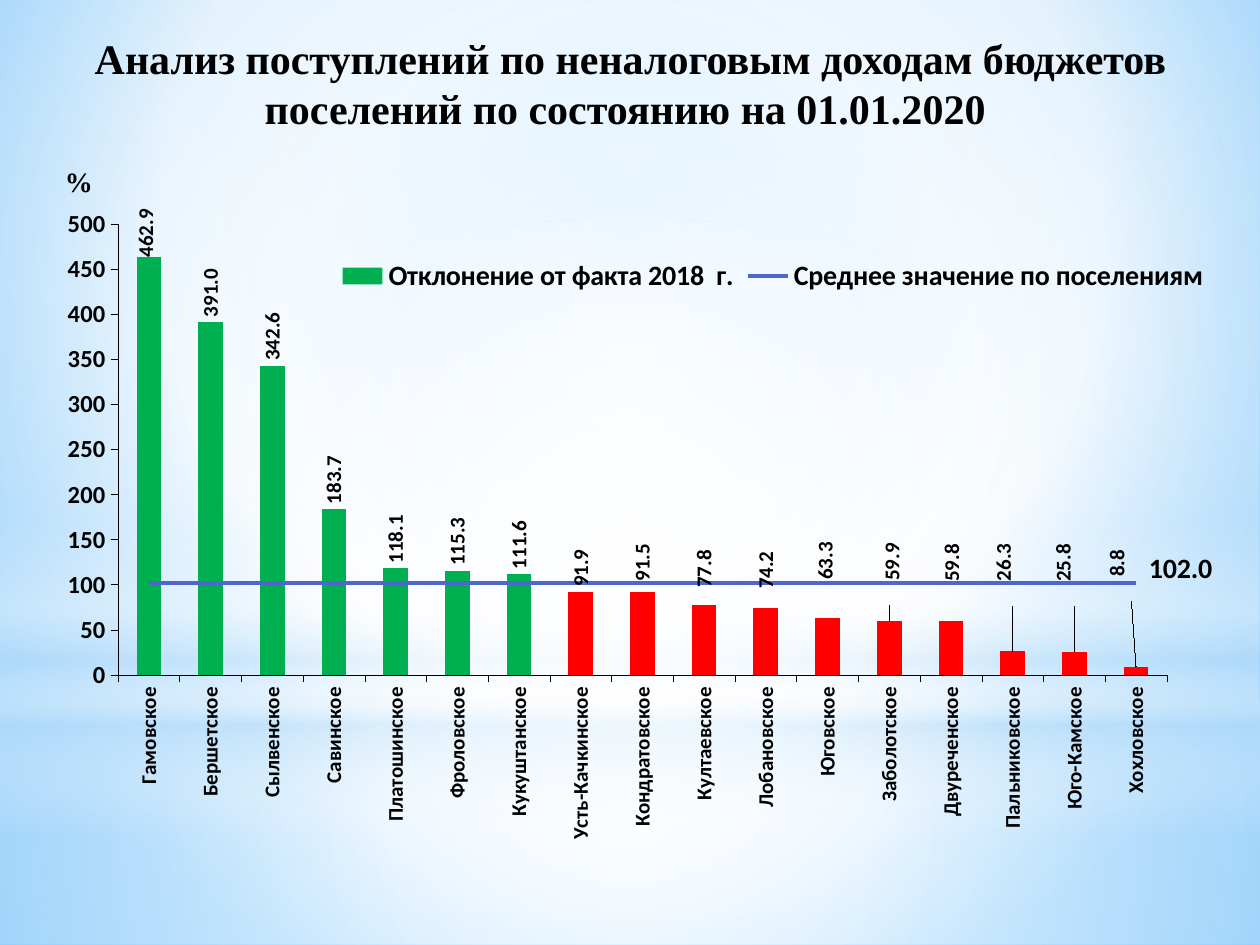
import pptx
import pptx.chart.data
import pptx.dml.color
import pptx.enum.chart
import pptx.enum.shapes
import pptx.enum.text
import pptx.oxml
import pptx.oxml.ns
import pptx.util

RGB = pptx.dml.color.RGBColor
BLACK = RGB(0x00, 0x00, 0x00)
GREEN = RGB(0x00, 0xB0, 0x50)
RED = RGB(0xFF, 0x00, 0x00)
BLUE = RGB(0x4E, 0x67, 0xC8)
WHITE = RGB(0xFF, 0xFF, 0xFF)
PALE_BLUE = RGB(0xB4, 0xDC, 0xFA)
SKY = RGB(0x9E, 0xD5, 0xFF)
DEEP_SKY = RGB(0x5B, 0xB9, 0xFF)

TITLE = "Анализ поступлений по неналоговым доходам бюджетов поселений по состоянию на 01.01.2020 "
UNIT = "%"
INCOME_NAME = "Отклонение от факта 2018  г. "
AVERAGE_NAME = "Среднее значение по поселениям"
AVERAGE = 102
SETTLEMENTS = [
    ("Гамовское", 462.9), ("Бершетское", 391), ("Сылвенское", 342.6),
    ("Савинское", 183.7), ("Платошинское", 118.1), ("Фроловское", 115.3),
    ("Кукуштанское", 111.6), ("Усть-Качкинское", 91.9), ("Кондратовское", 91.5),
    ("Култаевское", 77.8), ("Лобановское", 74.2), ("Юговское", 63.3),
    ("Заболотское", 59.9), ("Двуреченское", 59.8), ("Пальниковское", 26.3),
    ("Юго-Камское", 25.8), ("Хохловское", 8.8),
]
# Label shifts from the usual place above the bar: index -> (right, down) in px
LABEL_SHIFTS = {
    0: (-3, 5), 8: (0, -6), 9: (0, -12), 10: (0, -14), 11: (-2, -33),
    12: (3, -35), 13: (1, -34), 14: (-9, -65), 15: (-11, -65), 16: (-19, -85),
}
AVERAGE_SHIFT = (8, -14)

# Gradient stops: position %, colour, opacity %
CENTRE = (50, 50, 50, 50)
BACKGROUND = [(0, SKY, 100), (60, WHITE, 100), (100, DEEP_SKY, 100)]
RECTANGLE = pptx.enum.shapes.MSO_SHAPE.RECTANGLE
OVAL = pptx.enum.shapes.MSO_SHAPE.OVAL
BACKDROP = [  # preset, box in px, stops, focus (None: top to bottom)
    (RECTANGLE, (0, 703, 1260, 242),
     [(0, WHITE, 91), (37, WHITE, 76), (100, PALE_BLUE, 79)], CENTRE),
    (RECTANGLE, (0, 0, 1260, 703),
     [(0, WHITE, 89), (48, WHITE, 62), (100, PALE_BLUE, 79)], CENTRE),
    (RECTANGLE, (0, 519, 1260, 315),
     [(0, WHITE, 0), (29, WHITE, 30), (45, PALE_BLUE, 40), (55, WHITE, 26),
      (65, PALE_BLUE, 60), (100, WHITE, 0)], None),
    (OVAL, (0, 220, 1260, 703), [(0, WHITE, 100), (56, WHITE, 0)], CENTRE),
]

PAGE_SIZE = (1260, 945)
TITLE_BOX = (35, 26, 1191, 68)
CHART_BOX = (35, 165, 1206, 735)
PLOT_BOX = (83, 59, 1049, 451)  # within the chart
LEGEND_BOX = (300, 92, 876, 38)
UNIT_BOX = (15, 158, 118, 47)
UNIT_INDENT = 50
LABEL_FORMAT = "#,##0.0"


def px(count):
    return pptx.util.Emu(count * 914400 // 126)


def element(tag, content="", attributes=""):
    """Make an XML element of the drawing (a) or chart (c) namespace."""
    return pptx.oxml.parse_xml(
        f'<{tag} {pptx.oxml.ns.nsdecls("a", "c")} {attributes}>{content}</{tag}>')


def paint_gradient(owner, stops, focus):
    """Replace the first solid fill inside owner by a gradient."""
    stop_xml = "".join(
        f'<a:gs pos="{place * 1000}"><a:srgbClr val="{colour}">'
        f'<a:alpha val="{opacity * 1000}"/></a:srgbClr></a:gs>'
        for place, colour, opacity in stops)
    if focus:
        sides = " ".join(f'{side}="{share * 1000}"' for side, share in zip("ltrb", focus))
        course = f'<a:path path="circle"><a:fillToRect {sides}/></a:path>'
    else:
        course = '<a:lin ang="5400000" scaled="0"/>'
    solid = owner.xpath(".//a:solidFill")[0]
    gradient = element("a:gradFill", f"<a:gsLst>{stop_xml}</a:gsLst>{course}", 'rotWithShape="1"')
    solid.getparent().replace(solid, gradient)


def set_font(font, size, name="Calibri"):
    font.size, font.name, font.bold = pptx.util.Pt(size), name, True
    font.color.rgb = BLACK


def turn_upright(owner):
    body = owner.xpath("./c:txPr/a:bodyPr")[0]
    body.set("rot", "-5400000")
    body.set("vert", "horz")


def layout(box, fixed=True):
    """Manual layout from px: a fixed box, or a shift when not fixed."""
    shares = [value / CHART_BOX[2 + index % 2] for index, value in enumerate(box)]
    modes = '<c:xMode val="edge"/><c:yMode val="edge"/>' if fixed else ""
    values = "".join(f'<c:{key} val="{share:.4f}"/>' for key, share in zip("xywh", shares))
    return element("c:layout", f"<c:manualLayout>{modes}{values}</c:manualLayout>")


def shift_label(point, shift, position, size, upright):
    label = point.data_label
    set_font(label.font, size)
    label.position = position
    node = point.data_label._get_or_add_dLbl()
    if upright:
        turn_upright(node)
    index = node.find(pptx.oxml.ns.qn("c:idx"))
    index.addnext(element("c:numFmt", attributes=f'formatCode="{LABEL_FORMAT}" sourceLinked="0"'))
    index.addnext(layout(shift, fixed=False))


def style_axis(axis, size):
    set_font(axis.tick_labels.font, size)
    axis.has_major_gridlines = False
    axis.major_tick_mark = pptx.enum.chart.XL_TICK_MARK.OUTSIDE
    axis.minor_tick_mark = pptx.enum.chart.XL_TICK_MARK.NONE
    axis.format.line.color.rgb = BLACK
    axis.format.line.width = pptx.util.Pt(0.25)


def split_off_line(chart):
    """Move the second series from the column plot to a line plot."""
    columns = chart.plots[0]._element
    series = columns.xpath("./c:ser")[1]
    for flag in series.xpath("./c:invertIfNegative"):
        series.remove(flag)
    line = element("c:lineChart", '<c:grouping val="standard"/><c:varyColors val="0"/>')
    line.append(series)
    line.append(element("c:marker", attributes='val="1"'))
    for axis in columns.xpath("./c:axId"):
        line.append(element("c:axId", attributes=f'val="{axis.get("val")}"'))
    columns.addnext(line)


def add_income_chart(page):
    data = pptx.chart.data.CategoryChartData()
    data.categories = [name for name, _ in SETTLEMENTS]
    data.add_series(INCOME_NAME, [value for _, value in SETTLEMENTS])
    data.add_series(AVERAGE_NAME, [AVERAGE] * len(SETTLEMENTS))
    chart = page.shapes.add_chart(pptx.enum.chart.XL_CHART_TYPE.COLUMN_CLUSTERED,
                                  *map(px, CHART_BOX), data).chart
    set_font(chart.font, 18)
    chart.has_title = False
    split_off_line(chart)
    positions = pptx.enum.chart.XL_LABEL_POSITION

    columns, line = chart.plots
    columns.gap_width = 150
    columns.vary_by_categories = False
    income = columns.series[0]
    income.format.fill.solid()
    income.format.fill.fore_color.rgb = GREEN
    labels = income.data_labels
    labels.show_value = True
    labels.number_format, labels.number_format_is_linked = LABEL_FORMAT, False
    labels.position = positions.OUTSIDE_END
    set_font(labels.font, 12)
    turn_upright(labels._element)
    for index, (_, value) in enumerate(SETTLEMENTS):
        if value < AVERAGE:
            fill = income.points[index].format.fill
            fill.solid()
            fill.fore_color.rgb = RED
    for index, shift in LABEL_SHIFTS.items():
        shift_label(income.points[index], shift, positions.OUTSIDE_END, 12, True)

    average = line.series[0]
    average.smooth = False
    average.format.line.color.rgb = BLUE
    average.format.line.width = pptx.util.Pt(2.25)
    average.marker.style = pptx.enum.chart.XL_MARKER_STYLE.NONE
    average.data_labels.show_value = False
    shift_label(average.points[len(SETTLEMENTS) - 1], AVERAGE_SHIFT, positions.RIGHT, 16, False)

    style_axis(chart.category_axis, 12)
    chart.category_axis.tick_label_position = pptx.enum.chart.XL_TICK_LABEL_POSITION.LOW
    turn_upright(chart.category_axis._element)
    scale = chart.value_axis
    style_axis(scale, 14)
    scale.minimum_scale, scale.maximum_scale, scale.major_unit = 0, 500, 50
    scale.tick_labels.number_format, scale.tick_labels.number_format_is_linked = "0", False

    chart.has_legend = True
    legend = chart.legend
    legend.position = pptx.enum.chart.XL_LEGEND_POSITION.BOTTOM
    legend.include_in_layout = False
    set_font(legend.font, 16)
    for old in chart._chartSpace.xpath(".//c:plotArea/c:layout | .//c:legend/c:layout"):
        old.getparent().remove(old)
    plot_layout = layout(PLOT_BOX)
    plot_layout[0].insert(0, element("c:layoutTarget", attributes='val="inner"'))
    chart._chartSpace.xpath(".//c:plotArea")[0].insert(0, plot_layout)
    legend._element.xpath("./c:legendPos")[0].addnext(layout(LEGEND_BOX))


def write(frame, text, size, align):
    frame.word_wrap = True
    frame.vertical_anchor = pptx.enum.text.MSO_ANCHOR.TOP
    frame.text = text
    para = frame.paragraphs[0]
    para.alignment = align
    set_font(para.font, size, "Times New Roman")


def main():
    deck = pptx.Presentation()
    deck.slide_width, deck.slide_height = map(px, PAGE_SIZE)
    page = deck.slides.add_slide(deck.slide_layouts[5])
    page.background.fill.solid()
    paint_gradient(page.element, BACKGROUND, (20, 10, 20, 60))
    for preset, box, stops, focus in BACKDROP:
        shape = page.shapes.add_shape(preset, *map(px, box))
        shape.shadow.inherit = False
        shape.line.fill.background()
        shape.fill.solid()
        paint_gradient(shape.element, stops, focus)

    align = pptx.enum.text.PP_ALIGN
    title = page.shapes.title
    title.left, title.top, title.width, title.height = map(px, TITLE_BOX)
    title.element.getparent().append(title.element)  # in front of the backdrop
    write(title.text_frame, TITLE, 24, align.CENTER)
    title.text_frame.auto_size = pptx.enum.text.MSO_AUTO_SIZE.NONE
    add_income_chart(page)
    unit = page.shapes.add_textbox(*map(px, UNIT_BOX)).text_frame
    write(unit, UNIT, 16, align.LEFT)
    unit.margin_left = px(UNIT_INDENT)
    deck.save("out.pptx")


if __name__ == "__main__":
    main()
